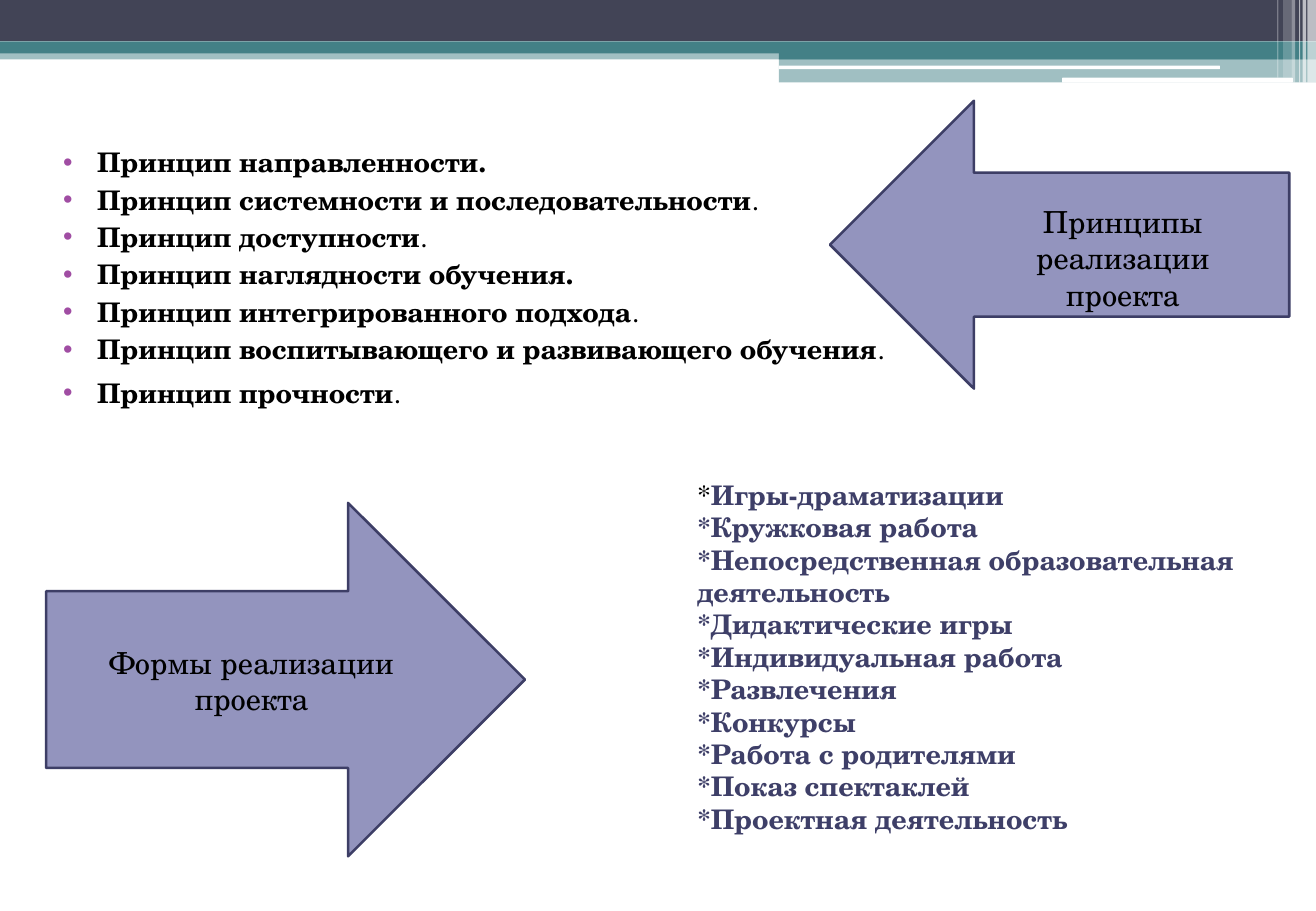
"""Build a slide on the principles and forms of carrying out a project."""
from dataclasses import dataclass

from lxml.etree import SubElement
from pptx import Presentation
from pptx.dml.color import RGBColor
from pptx.enum.shapes import MSO_SHAPE
from pptx.enum.text import PP_ALIGN
from pptx.oxml.ns import qn
from pptx.util import Inches, Pt


@dataclass(frozen=True)
class Theme:
    font: str = "TeX Gyre Schola"
    body: int = 16
    label: int = 18
    black: str = "000000"
    white: str = "FFFFFF"
    navy: str = "424456"
    teal: str = "438086"
    bullet: str = "A04DA3"
    arrow: str = "9394BE"
    edge: str = "3D3E66"
    form: str = "3E3F68"


THEME = Theme()

BANDS = [
    (0, 0.4, 10.83, 0.09, THEME.teal, 50),
    (0, 0, 10.83, 0.34, THEME.navy, 100),
    (0, 0.34, 10.83, 0.1, THEME.teal, 100),
    (6.41, 0.39, 4.42, 0.1, THEME.teal, 100),
    (6.41, 0.48, 4.42, 0.2, THEME.teal, 50),
]
BARS = [(6.41, 0.54, 3.63, 0.03), (8.74, 0.64, 1.9, 0.04)]
STRIPES = [
    (10.76, 0.07, 0.68, 65),
    (10.72, 0.03, 0.68, 65),
    (10.69, 0.01, 0.68, 60),
    (10.63, 0.03, 0.68, 40),
    (10.56, 0.07, 0.64, 20),
    (10.51, 0.01, 0.64, 30),
]
RULES = [
    ("Принцип направленности.", ""),
    ("Принцип системности и последовательности", "."),
    ("Принцип доступности", "."),
    ("Принцип наглядности обучения.", ""),
    ("Принцип интегрированного подхода", "."),
    ("Принцип воспитывающего и развивающего обучения", "."),
    ("Принцип прочности", "."),
]
FORMS = [
    "Игры-драматизации",
    "Кружковая работа",
    "Непосредственная образовательная деятельность",
    "Дидактические игры",
    "Индивидуальная работа",
    "Развлечения",
    "Конкурсы",
    "Работа с родителями",
    "Показ спектаклей",
    "Проектная деятельность",
]


def add_block(slide, kind, box, color, alpha=100):
    """Add a filled shape without outline or shadow."""
    shape = slide.shapes.add_shape(kind, *map(Inches, box))
    shape.shadow.inherit = False
    shape.fill.solid()
    shape.fill.fore_color.rgb = RGBColor.from_string(color)
    shape.line.fill.background()
    if alpha < 100:
        tint = shape.fill._xPr.find(qn("a:solidFill"))[0]
        SubElement(tint, qn("a:alpha"), val=str(alpha * 1000))
    return shape


def add_arrow(slide, kind, box):
    """Add an outlined block arrow."""
    line = add_block(slide, kind, box, THEME.arrow).line
    line.color.rgb = RGBColor.from_string(THEME.edge)
    line.width = Pt(1.5)


def add_frame(slide, box):
    """Add a wrapping text box and return its text frame."""
    frame = slide.shapes.add_textbox(*map(Inches, box)).text_frame
    frame.word_wrap = True
    return frame


def next_line(frame, index):
    """Return the first paragraph, or a new one after it."""
    return frame.add_paragraph() if index else frame.paragraphs[0]


def set_font(font, size, color):
    """Set the typeface, size and colour of a font."""
    font.name = THEME.font
    font.size = Pt(size)
    font.color.rgb = RGBColor.from_string(color)


def add_run(line, text, bold):
    """Append a run of the given weight."""
    run = line.add_run()
    run.text = text
    run.font.bold = bold
    return run


def set_bullet(line):
    """Give a paragraph a coloured bullet and hanging indent."""
    props = line._p.get_or_add_pPr()
    props.set("marL", str(Inches(0.4)))
    props.set("indent", str(Inches(-0.28)))
    tint = SubElement(props, qn("a:buClr"))
    SubElement(tint, qn("a:srgbClr"), val=THEME.bullet)
    SubElement(props, qn("a:buFont"), typeface="Arial")
    SubElement(props, qn("a:buChar"), char="•")


def add_rules(slide, box):
    """Add the bulleted list of principles."""
    frame = add_frame(slide, box)
    for index, (name, tail) in enumerate(RULES):
        line = next_line(frame, index)
        set_bullet(line)
        set_font(line.font, THEME.body, THEME.black)
        line.space_before = Pt(6.5 if index == len(RULES) - 1 else 3)
        add_run(line, name, True)
        if tail:
            add_run(line, tail, False)


def add_forms(slide, box):
    """Add the starred list of forms of work."""
    frame = add_frame(slide, box)
    for index, name in enumerate(FORMS):
        line = next_line(frame, index)
        set_font(line.font, THEME.body, THEME.form)
        if index:
            add_run(line, "*" + name, True)
        else:
            star = add_run(line, "*", False)
            star.font.color.rgb = RGBColor.from_string(THEME.black)
            add_run(line, name, True)


def add_label(slide, text, box):
    """Add a centred arrow label."""
    line = add_frame(slide, box).paragraphs[0]
    line.text = text
    line.alignment = PP_ALIGN.CENTER
    set_font(line.font, THEME.label, THEME.black)


def add_header(slide):
    """Add the bands, bars and stripes along the top."""
    for *box, color, alpha in BANDS:
        add_block(slide, MSO_SHAPE.RECTANGLE, box, color, alpha)
    for box in BARS:
        add_block(slide, MSO_SHAPE.ROUNDED_RECTANGLE, box, THEME.white)
    for left, width, height, alpha in STRIPES:
        box = (left, 0, width, height)
        add_block(slide, MSO_SHAPE.RECTANGLE, box, THEME.white, alpha)


def main():
    """Build and save the slide."""
    deck = Presentation()
    deck.slide_width, deck.slide_height = Inches(10.83), Inches(7.5)
    slide = deck.slides.add_slide(deck.slide_layouts[6])
    add_header(slide)
    add_rules(slide, (0.3, 1.15, 9.75, 3.07))
    add_forms(slide, (5.64, 3.89, 5.19, 3.1))
    add_arrow(slide, MSO_SHAPE.RIGHT_ARROW, (0.38, 4.14, 3.94, 2.91))
    add_arrow(slide, MSO_SHAPE.LEFT_ARROW, (6.83, 0.83, 3.78, 2.37))
    add_label(slide, "Принципы реализации проекта", (7.94, 1.62, 2.6, 0.71))
    add_label(slide, "Формы реализации проекта", (0.69, 5.25, 2.76, 0.71))
    deck.save("out.pptx")


if __name__ == "__main__":
    main()
